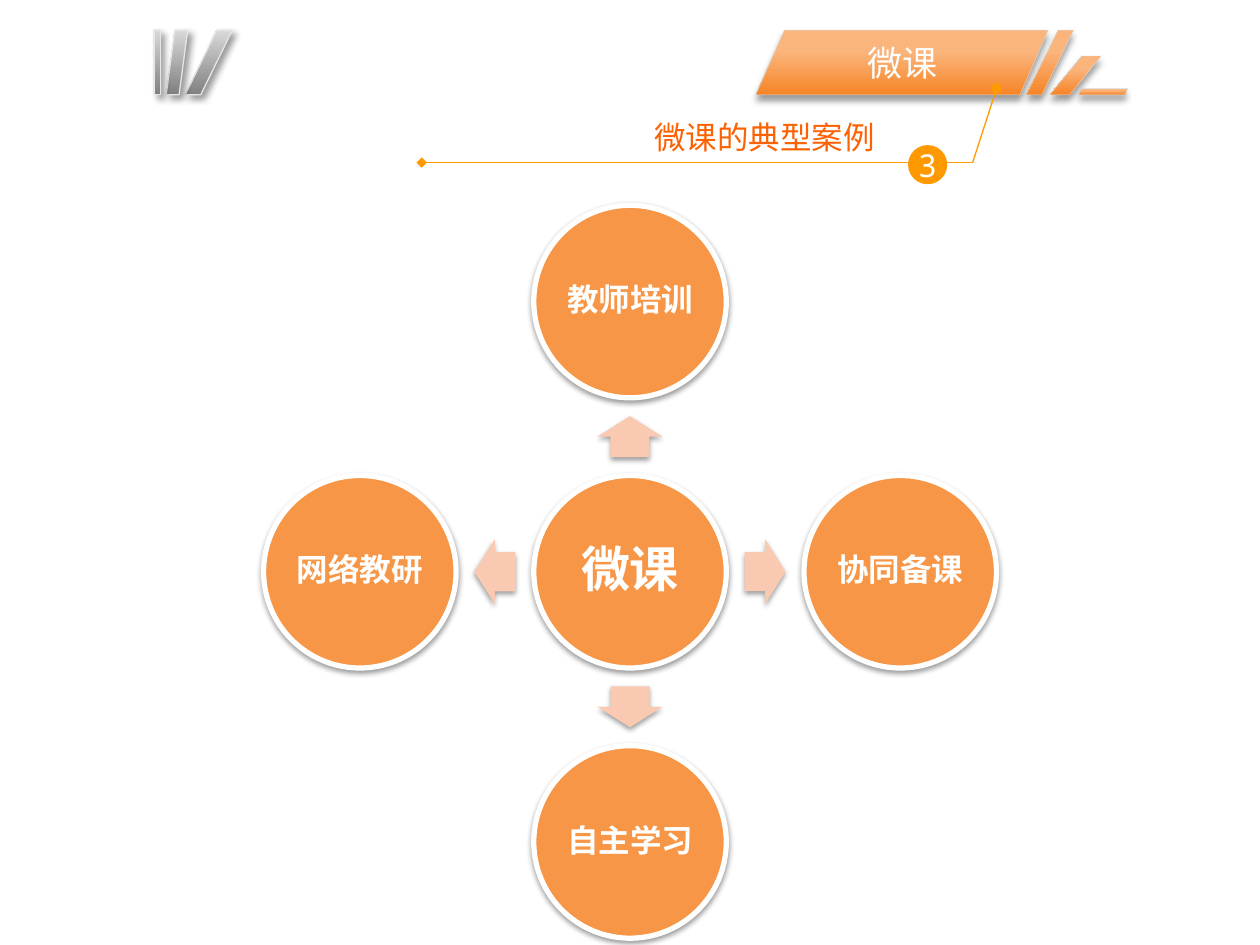
from pptx import Presentation
from pptx.dml.color import RGBColor
from pptx.enum.shapes import MSO_CONNECTOR, MSO_SHAPE
from pptx.enum.text import MSO_ANCHOR, PP_ALIGN
from pptx.oxml.ns import qn
from pptx.util import Pt
from lxml import etree

PARALLELOGRAM, RECTANGLE = MSO_SHAPE.PARALLELOGRAM, MSO_SHAPE.RECTANGLE
OVAL, ARROW = MSO_SHAPE.OVAL, MSO_SHAPE.RIGHT_ARROW
STRAIGHT = MSO_CONNECTOR.STRAIGHT
MIDDLE, TOP = MSO_ANCHOR.MIDDLE, MSO_ANCHOR.TOP
CENTER, RIGHT = PP_ALIGN.CENTER, PP_ALIGN.RIGHT

THEME = {
    "white": "FFFFFF", "disc": "F79646", "arrow": "FAC9B1",
    "accent": "FF9900", "heading": "FC6204",
    "cjk": "Noto Sans CJK SC", "banner_font": "Arial Narrow", "number_font": "Noto Sans Mono",
    "banner_size": 20, "hub_size": 28, "text_size": 18,
}
# Gradient angles run counter-clockwise; shadows are opacity, blur, distance, direction.
ORANGE = {"stops": [(0.33, "FAB57D"), (1, "F68426")], "angle": 270,
          "line": ("D7D7D7", 0.25), "shadow": (40, 4, 3, 90)}
GREY = {"stops": [(0, "808080"), (1, "D9D9D9")], "angle": 90,
        "line": ("E6E6E6", 0.75), "shadow": (40, 4, 3, 45)}
DISC_SHADOW = (38, 3.1, 1.6, 90)

BANNER_TEXT = "微课"
HEADING, HEADING_NUMBER = "微课的典型案例", "3"
HUB = "微课"
# label, column step, row step, arrow rotation
BRANCHES = [("教师培训", 0, -1, 270), ("协同备课", 1, 0, 0),
            ("自主学习", 0, 1, 90), ("网络教研", -1, 0, 180)]

# kind, left, top, width, height, adjustment, style
BANNER = (PARALLELOGRAM, 432, 17.2, 167, 37, 0.438, ORANGE)
BARS = [
    (PARALLELOGRAM, 105.8, 17.2, 27, 37, 0.67, GREY),
    (PARALLELOGRAM, 586.5, 17.2, 27, 37, 0.67, ORANGE),
    (PARALLELOGRAM, 600, 32, 29.3, 22.2, 0.814, ORANGE),
    (PARALLELOGRAM, 95, 17.2, 12.3, 37, 0.4, GREY),
    (RECTANGLE, 88, 17.2, 3.6, 37, None, GREY),
    (PARALLELOGRAM, 616.3, 50.6, 28.1, 3.6, 0.438, ORANGE),
]
# start, end, mark at the end
CORNER = (555.8, 92.9)
LINES = [(CORNER, (569.5, 50.6), "oval"), (CORNER, (241, 92.9), "diamond")]

CENTER_X, CENTER_Y, PITCH, DIAMETER = 360, 326.7, 154.4, 110
ARROW_WIDTH, ARROW_HEIGHT = 23.4, 37.2


def set_shadow(shape, shadow):
    shape.shadow.inherit = False
    if shadow:
        opacity, blur, distance, direction = shadow
        effects = shape._element.spPr.find(qn("a:effectLst"))
        outer = etree.SubElement(effects, qn("a:outerShdw"), {
            "blurRad": str(Pt(blur)), "dist": str(Pt(distance)),
            "dir": str(direction * 60000), "algn": "ctr", "rotWithShape": "0"})
        color = etree.SubElement(outer, qn("a:srgbClr"), val="000000")
        etree.SubElement(color, qn("a:alpha"), val=str(opacity * 1000))


def set_line(line, color, width):
    line.color.rgb = RGBColor.from_string(color)
    line.width = Pt(width)


def add_shape(slide, kind, box, fill=None, line=None, shadow=None, adjustments=()):
    shape = slide.shapes.add_shape(kind, *map(Pt, box))
    for index, value in enumerate(adjustments):
        shape.adjustments[index] = value
    if fill:
        shape.fill.solid()
        shape.fill.fore_color.rgb = RGBColor.from_string(fill)
    if line:
        set_line(shape.line, *line)
    else:
        shape.line.fill.background()
    set_shadow(shape, shadow)
    return shape


def add_bar(slide, kind, left, top, width, height, adjustment, style):
    shape = add_shape(slide, kind, (left, top, width, height), line=style["line"],
                      shadow=style["shadow"],
                      adjustments=() if adjustment is None else (adjustment,))
    shape.fill.gradient()
    shape.fill.gradient_angle = style["angle"]
    for stop, (position, color) in zip(shape.fill.gradient_stops, style["stops"]):
        stop.position = position
        stop.color.rgb = RGBColor.from_string(color)
    return shape


def write(shape, text, size, font=THEME["cjk"], color=THEME["white"], bold=False,
          margins=(0, 0, 0, 0), anchor=MIDDLE, align=CENTER, spacing=None):
    """Fill a shape with one paragraph; margins run left, top, right, bottom."""
    frame = shape.text_frame
    frame_format = {"word_wrap": True, "vertical_anchor": anchor}
    for side, margin in zip(("left", "top", "right", "bottom"), margins):
        frame_format["margin_" + side] = Pt(margin)
    paragraph = frame.paragraphs[0]
    run = paragraph.add_run()
    run.text = text
    formats = [
        (frame, frame_format),
        (paragraph, {"alignment": align, "line_spacing": spacing}),
        (run.font, {"name": font, "size": Pt(size), "bold": bold}),
    ]
    for target, values in formats:
        for name, value in values.items():
            setattr(target, name, value)
    run.font.color.rgb = RGBColor.from_string(color)
    latin = run.font._element.find(qn("a:latin"))
    latin.addnext(latin.makeelement(qn("a:ea"), {"typeface": THEME["cjk"]}))


def add_line(slide, start, end, mark):
    connector = slide.shapes.add_connector(STRAIGHT, *map(Pt, start + end))
    set_line(connector.line, THEME["accent"], 0.75)
    etree.SubElement(connector.line._get_or_add_ln(), qn("a:tailEnd"), type=mark)
    etree.SubElement(connector._element.spPr, qn("a:effectLst"))


def centered_box(x, y, width, height):
    return x - width / 2, y - height / 2, width, height


def add_disc(slide, text, x, y, size, margin):
    disc = add_shape(slide, OVAL, centered_box(x, y, DIAMETER, DIAMETER), THEME["disc"],
                     (THEME["white"], 3), DISC_SHADOW)
    write(disc, text, size, bold=True, margins=(margin,) * 4, spacing=0.9)


def add_header(slide):
    banner = add_bar(slide, *BANNER)
    write(banner, BANNER_TEXT, THEME["banner_size"], THEME["banner_font"],
          margins=(0, 3.6, 0, 3.6))
    for bar in BARS:
        add_bar(slide, *bar)
    for line in LINES:
        add_line(slide, *line)
    number = add_shape(slide, OVAL, (518.9, 82.9, 22.4, 22.4), THEME["accent"])
    write(number, HEADING_NUMBER, THEME["text_size"], THEME["number_font"],
          margins=(1.4, 0.7, 1.4, 0.7))
    heading = slide.shapes.add_textbox(Pt(257.8), Pt(64), Pt(249), Pt(29))
    write(heading, HEADING, THEME["text_size"], color=THEME["heading"],
          margins=(0, 3.6, 7.2, 3.6), anchor=TOP, align=RIGHT)


def add_radial_diagram(slide):
    add_disc(slide, HUB, CENTER_X, CENTER_Y, THEME["hub_size"], 2.9)
    for label, column, row, rotation in BRANCHES:
        step_x, step_y = column * PITCH, row * PITCH
        arrow_box = centered_box(CENTER_X + step_x / 2, CENTER_Y + step_y / 2,
                                 ARROW_WIDTH, ARROW_HEIGHT)
        arrow = add_shape(slide, ARROW, arrow_box, THEME["arrow"],
                          shadow=DISC_SHADOW, adjustments=(0.6, 0.5))
        arrow.rotation = rotation
        add_disc(slide, label, CENTER_X + step_x, CENTER_Y + step_y, THEME["text_size"], 2)


def main():
    presentation = Presentation()
    presentation.slide_width, presentation.slide_height = Pt(720), Pt(540)
    slide = presentation.slides.add_slide(presentation.slide_layouts[6])
    add_header(slide)
    add_radial_diagram(slide)
    presentation.save("out.pptx")


if __name__ == "__main__":
    main()
